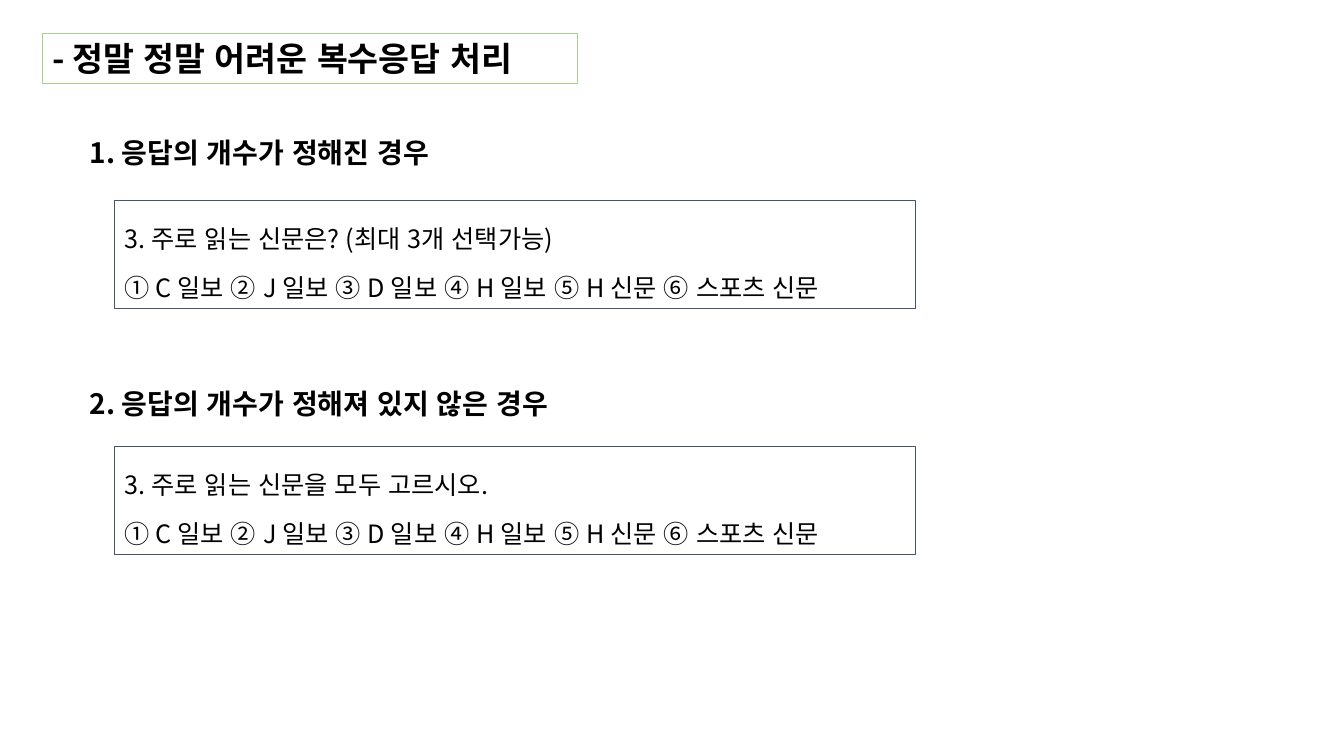
import pptx
import pptx.dml.color
import pptx.enum.lang
import pptx.enum.shapes
import pptx.enum.text
import pptx.oxml.ns
import pptx.util
from lxml import etree

COLORS = {"text": "000000", "title_border": "A9D18E", "question_border": "44546A"}
FONT = "Noto Sans CJK KR"
CHOICES = "① C 일보 ② J 일보 ③ D 일보 ④ H 일보 ⑤ H 신문 ⑥ 스포츠 신문 "

presentation = pptx.Presentation()
presentation.slide_width = pptx.util.Inches(13.33)
presentation.slide_height = pptx.util.Inches(7.5)
slide = presentation.slides.add_slide(presentation.slide_layouts[6])


def add_text(lines, left, top, width, height, size, bold=False, border=None,
             align=pptx.enum.text.PP_ALIGN.LEFT, line_spacing=1.0):
    """Add one paragraph per line, in a bordered rectangle if border is given."""
    bounds = [pptx.util.Inches(length) for length in (left, top, width, height)]
    if border:
        shape = slide.shapes.add_shape(
            pptx.enum.shapes.MSO_SHAPE.RECTANGLE, *bounds)
        shape.shadow.inherit = False
        shape.fill.background()
        shape.line.color.rgb = pptx.dml.color.RGBColor.from_string(COLORS[border])
        shape.line.width = pptx.util.Pt(0.75)
    else:
        shape = slide.shapes.add_textbox(*bounds)
    frame = shape.text_frame
    frame.word_wrap = True
    frame.vertical_anchor = pptx.enum.text.MSO_ANCHOR.TOP
    frame.text = "\n".join(lines)
    for paragraph in frame.paragraphs:
        paragraph.alignment = align
        paragraph.line_spacing = line_spacing
        font = paragraph.runs[0].font
        font.size = pptx.util.Pt(size)
        font.bold = bold
        font.color.rgb = pptx.dml.color.RGBColor.from_string(COLORS["text"])
        font.name = FONT
        font.language_id = pptx.enum.lang.MSO_LANGUAGE_ID.KOREAN
        properties = paragraph.runs[0]._r.get_or_add_rPr()
        east_asian = etree.SubElement(properties, pptx.oxml.ns.qn("a:ea"))
        east_asian.set("typeface", FONT)


add_text(["- 정말 정말 어려운 복수응답 처리"], 0.42, 0.33, 5.31, 0.5,
         size=24, bold=True, border="title_border")

sections = [
    ("1. 응답의 개수가 정해진 경우", 1.3, 3.92,
     "3. 주로 읽는 신문은? (최대 3개 선택가능)", 1.99),
    ("2. 응답의 개수가 정해져 있지 않은 경우", 3.79, 5.24,
     "3. 주로 읽는 신문을 모두 고르시오.", 4.43),
]
for heading, heading_top, heading_width, question, question_top in sections:
    add_text([heading], 0.79, heading_top, heading_width, 0.44, size=20, bold=True)
    add_text([question, CHOICES], 1.14, question_top, 7.94, 1.07, size=18,
             border="question_border", align=pptx.enum.text.PP_ALIGN.JUSTIFY,
             line_spacing=1.6)

presentation.save("out.pptx")
